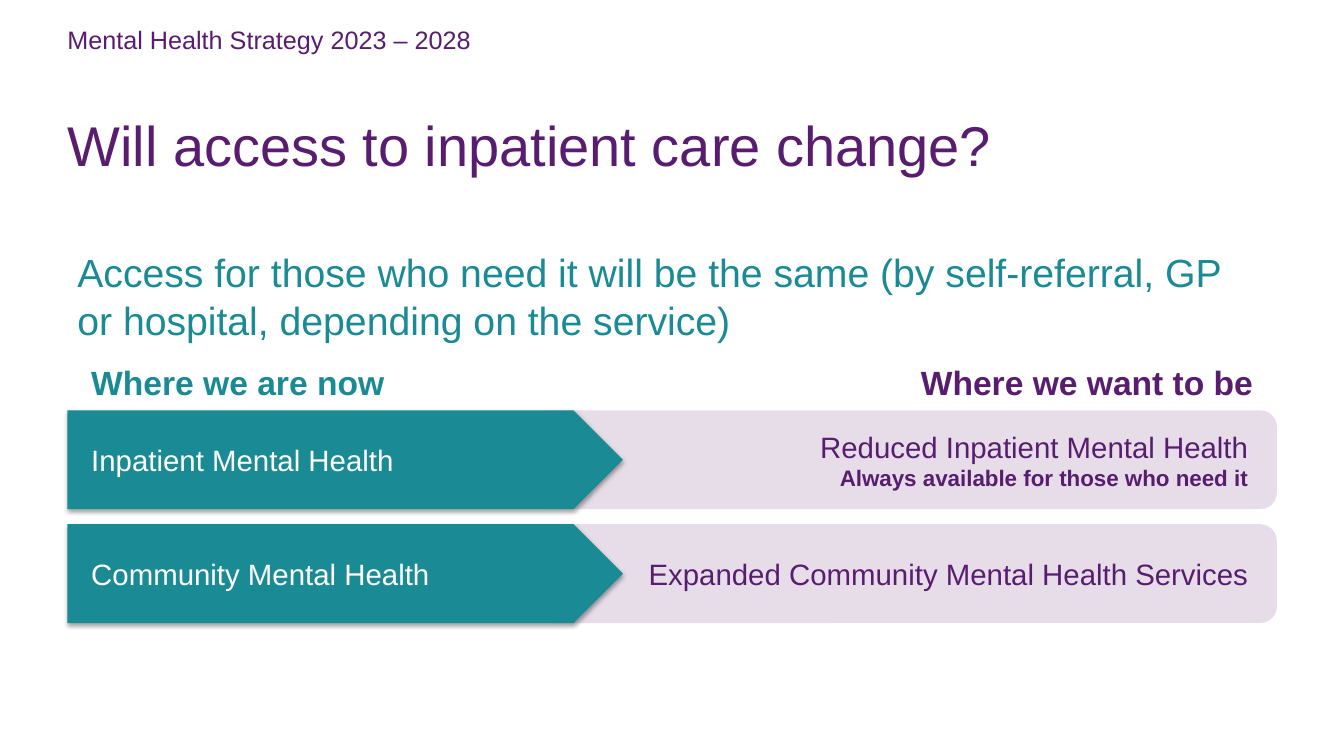
from dataclasses import dataclass

from lxml import etree
from pptx import Presentation
from pptx import util as u
from pptx.dml.color import RGBColor
from pptx.enum import shapes, text
from pptx.oxml import ns


@dataclass(frozen=True)
class Theme:
    """Colours, type sizes and font of the slide."""
    purple: str = "591D70"
    teal: str = "1A8B95"
    white: str = "FFFFFF"
    shadow: str = "000000"
    font: str = "Arial"
    title: int = 40
    lead: int = 28
    heading: int = 24
    label: int = 21
    strapline: int = 18
    note: int = 16


THEME = Theme()
LEFT, WIDTH = 1.7, 30.48
PAD, INDENT = 0.25, 0.6
ROW_TOP, ROW_HEIGHT, ROW_STEP = 10.34, 2.49, 2.87
ARROW_WIDTH, TARGET_WIDTH = 14, 18.75
ROWS = [
    ("Inpatient Mental Health",
     ["Reduced Inpatient Mental Health", "Always available for those who need it"]),
    ("Community Mental Health",
     ["Expanded Community Mental Health Services"]),
]


def write(holder, lines, colour, left=PAD, right=PAD, top=0.13, middle=False, flush_right=False):
    """Write (words, size, bold) lines into a shape, one paragraph each."""
    frame = holder.text_frame
    frame.word_wrap = True
    frame.margin_left, frame.margin_right = u.Cm(left), u.Cm(right)
    frame.margin_top, frame.margin_bottom = u.Cm(top), u.Cm(0.13)
    frame.vertical_anchor = text.MSO_ANCHOR.MIDDLE if middle else text.MSO_ANCHOR.TOP
    for index, (words, size, bold) in enumerate(lines):
        paragraph = frame.add_paragraph() if index else frame.paragraphs[0]
        paragraph.alignment = text.PP_ALIGN.RIGHT if flush_right else text.PP_ALIGN.LEFT
        run = paragraph.add_run()
        run.text = words
        run.font.name, run.font.size, run.font.bold = THEME.font, u.Pt(size), bold
        run.font.color.rgb = RGBColor.from_string(colour)
    return frame


def add_block(slide, kind, box, colour):
    """Add a filled preset shape with neither outline nor shadow."""
    block = slide.shapes.add_shape(kind, *map(u.Cm, box))
    block.fill.solid()
    block.fill.fore_color.rgb = RGBColor.from_string(colour)
    block.line.fill.background()
    block.shadow.inherit = False
    return block


def add_words(slide, box, line, colour, **layout):
    """Add a text box holding one line of content."""
    return write(slide.shapes.add_textbox(*map(u.Cm, box)), [line], colour, **layout)


def make_tint(block, percent):
    """Make the fill of a block partly transparent."""
    colour = block.fill._xPr.find(".//" + ns.qn("a:srgbClr"))
    etree.SubElement(colour, ns.qn("a:alpha"), val=str(percent * 1000))


def cast_shadow(block):
    """Give a block a soft shadow straight below it."""
    effects = block._element.spPr.find(ns.qn("a:effectLst"))
    outer = etree.SubElement(effects, ns.qn("a:outerShdw"), blurRad=str(u.Pt(3.1)),
                             dist=str(u.Pt(1.8)), dir="5400000", rotWithShape="0")
    colour = etree.SubElement(outer, ns.qn("a:srgbClr"), val=THEME.shadow)
    etree.SubElement(colour, ns.qn("a:alpha"), val="35000")


def add_header(slide, left, top, width):
    """Place the strapline, title and lead sentence."""
    strapline = add_block(slide, shapes.MSO_SHAPE.RECTANGLE, (left, top, 25, 1.52), THEME.white)
    frame = write(strapline, [("Mental Health Strategy 2023 – 2028", THEME.strapline, False)],
                  THEME.purple, left=0)
    frame.paragraphs[0].line_spacing = 1.07
    add_words(slide, (left, top + 1.6, width, 3.18),
              ("Will access to inpatient care change?", THEME.title, False),
              THEME.purple, left=0, middle=True)
    add_words(slide, (left, top + 5.59, width, 9.83),
              ("Access for those who need it will be the same (by self-referral, GP "
               "or hospital, depending on the service)", THEME.lead, False),
              THEME.teal, top=0.25, right=0.5)


def add_headings(slide, left, top, width):
    """Place the headings over the present and future columns."""
    add_words(slide, (left, top, 13.26, 1.27),
              ("Where we are now", THEME.heading, True), THEME.teal, left=INDENT)
    add_words(slide, (left + width - 16.03, top, 16.03, 1.27),
              ("Where we want to be", THEME.heading, True),
              THEME.purple, right=INDENT, flush_right=True)


def add_change(slide, left, top, width, height, now, future):
    """Place an arrow for the present over a tinted bar for the future."""
    target = add_block(slide, shapes.MSO_SHAPE.ROUNDED_RECTANGLE,
                       (left + width - TARGET_WIDTH, top, TARGET_WIDTH, height), THEME.purple)
    make_tint(target, 15)
    lines = [(words, THEME.note if index else THEME.label, index > 0)
             for index, words in enumerate(future)]
    write(target, lines, THEME.purple, right=INDENT, middle=True, flush_right=True)
    arrow = add_block(slide, shapes.MSO_SHAPE.PENTAGON,
                      (left, top, ARROW_WIDTH, height), THEME.teal)
    cast_shadow(arrow)
    write(arrow, [(now, THEME.label, False)], THEME.white, left=INDENT, middle=True)


def main():
    """Build and save the slide."""
    deck = Presentation()
    deck.slide_width, deck.slide_height = u.Cm(33.87), u.Cm(19.05)
    slide = deck.slides.add_slide(deck.slide_layouts[6])
    add_header(slide, LEFT, 0.43, WIDTH)
    add_headings(slide, LEFT, ROW_TOP - 1.35, WIDTH)
    for index, (now, future) in enumerate(ROWS):
        add_change(slide, LEFT, ROW_TOP + index * ROW_STEP, WIDTH, ROW_HEIGHT, now, future)
    deck.save("out.pptx")


if __name__ == "__main__":
    main()
